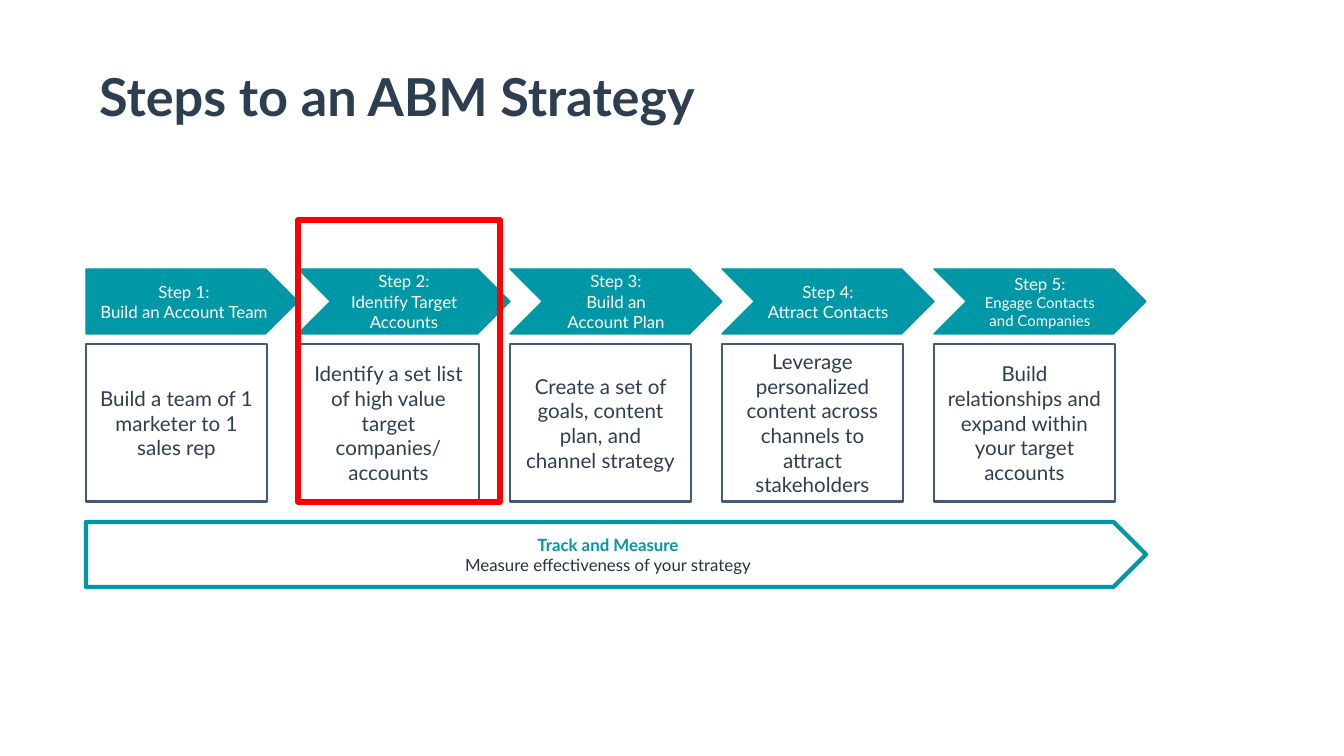
import copy
from typing import NamedTuple, Optional

import pptx
import pptx.dml.color
import pptx.enum.shapes
import pptx.enum.text
import pptx.util

EMU_PER_PX = 914400 / 134.4
TEAL, SLATE, NAVY, INK = "0097A7", "425B76", "2D3E50", "253342"
WHITE, RED = "FFFFFF", "FF0000"
SHAPE = pptx.enum.shapes.MSO_SHAPE
ANCHOR = pptx.enum.text.MSO_ANCHOR
ALIGN = pptx.enum.text.PP_ALIGN

LEFT, PITCH = 86, 212
STEP_TOP, BAND_HEIGHT = 269, 65
DETAIL_TOP, DETAIL_WIDTH, DETAIL_HEIGHT = 344, 181, 158


class Box(NamedTuple):
    left: int
    top: int
    width: int
    height: int


class Line(NamedTuple):
    text: str
    size: int
    color: str
    bold: bool = False


class Step(NamedTuple):
    action: str
    detail: str
    action_size: int = 9


STEPS = [
    Step("Build an Account Team", "Build a team of 1 marketer to 1 sales rep"),
    Step("Identify Target Accounts",
         "Identify a set list of high value target companies/ accounts"),
    Step("Build an Account Plan",
         "Create a set of goals, content plan, and channel strategy"),
    Step("Attract Contacts",
         "Leverage personalized content across channels to attract stakeholders"),
    Step("Engage Contacts and Companies",
         "Build relationships and expand within your target accounts", 8),
]


def px(length: int) -> int:
    return round(length * EMU_PER_PX)


def rgb(color: str) -> pptx.dml.color.RGBColor:
    return pptx.dml.color.RGBColor.from_string(color)


def prepare_frame(frame, anchor) -> None:
    margin = pptx.util.Inches(0.1)
    frame_format = {"word_wrap": True, "vertical_anchor": anchor,
                    "margin_left": margin, "margin_right": margin,
                    "margin_top": margin, "margin_bottom": margin}
    for name, value in frame_format.items():
        setattr(frame, name, value)


def add_line(paragraph, line: Line):
    run = paragraph.add_run()
    run.text = line.text
    font_format = {"name": "Lato", "size": pptx.util.Pt(line.size),
                   "bold": line.bold}
    for name, value in font_format.items():
        setattr(run.font, name, value)
    run.font.color.rgb = rgb(line.color)
    return run


def write(frame, paragraphs: list[list[Line]], align) -> None:
    """Write paragraphs whose lines are parted by line breaks."""
    for index, lines in enumerate(paragraphs):
        paragraph = frame.paragraphs[0] if index == 0 else frame.add_paragraph()
        paragraph.alignment = align
        run = None
        for line in lines:
            if run is not None:
                # The break takes the format of the line it ends
                paragraph.add_line_break()
                paragraph._p[-1].append(copy.deepcopy(run._r.rPr))
            run = add_line(paragraph, line)


def add_panel(slide, preset, box: Box, line_color: str, line_width: float,
              paragraphs: list[list[Line]], fill: Optional[str] = None) -> None:
    panel = slide.shapes.add_shape(preset, *map(px, box))
    panel.shadow.inherit = False
    if fill:
        panel.fill.solid()
        panel.fill.fore_color.rgb = rgb(fill)
    else:
        panel.fill.background()
    panel.line.color.rgb = rgb(line_color)
    panel.line.width = pptx.util.Pt(line_width)
    prepare_frame(panel.text_frame, ANCHOR.MIDDLE)
    write(panel.text_frame, paragraphs, ALIGN.CENTER)


def main() -> None:
    deck = pptx.Presentation()
    deck.slide_width, deck.slide_height = px(1344), px(756)
    slide = deck.slides.add_slide(deck.slide_layouts[6])

    # Title
    title = slide.shapes.add_textbox(*map(px, Box(LEFT, 51, 737, 94)))
    prepare_frame(title.text_frame, ANCHOR.TOP)
    write(title.text_frame,
          [[Line("Steps to an ABM Strategy", 28, NAVY, True)]], ALIGN.LEFT)

    # Step arrows
    for index, step in enumerate(STEPS):
        preset = SHAPE.CHEVRON if index else SHAPE.PENTAGON
        heading = [Line(f"Step {index + 1}:", 9, WHITE),
                   Line(step.action, step.action_size, WHITE)]
        add_panel(slide, preset,
                  Box(LEFT + index * PITCH, STEP_TOP, PITCH, BAND_HEIGHT),
                  TEAL, 0.75, [heading], TEAL)

    # Step details
    for index, step in enumerate(STEPS):
        add_panel(slide, SHAPE.RECTANGLE,
                  Box(LEFT + index * PITCH, DETAIL_TOP, DETAIL_WIDTH, DETAIL_HEIGHT),
                  SLATE, 1.5, [[Line(step.detail, 11, NAVY)]])

    # Tracking band under all steps
    add_panel(slide, SHAPE.PENTAGON,
              Box(LEFT, 522, len(STEPS) * PITCH, BAND_HEIGHT), TEAL, 2.25,
              [[Line("Track and Measure", 9, TEAL, True)],
               [Line("Measure effectiveness of your strategy", 9, INK)]])

    # Highlight around step 2
    add_panel(slide, SHAPE.RECTANGLE, Box(LEFT + PITCH, 220, 202, 282), RED, 3, [])

    deck.save("out.pptx")


if __name__ == "__main__":
    main()
